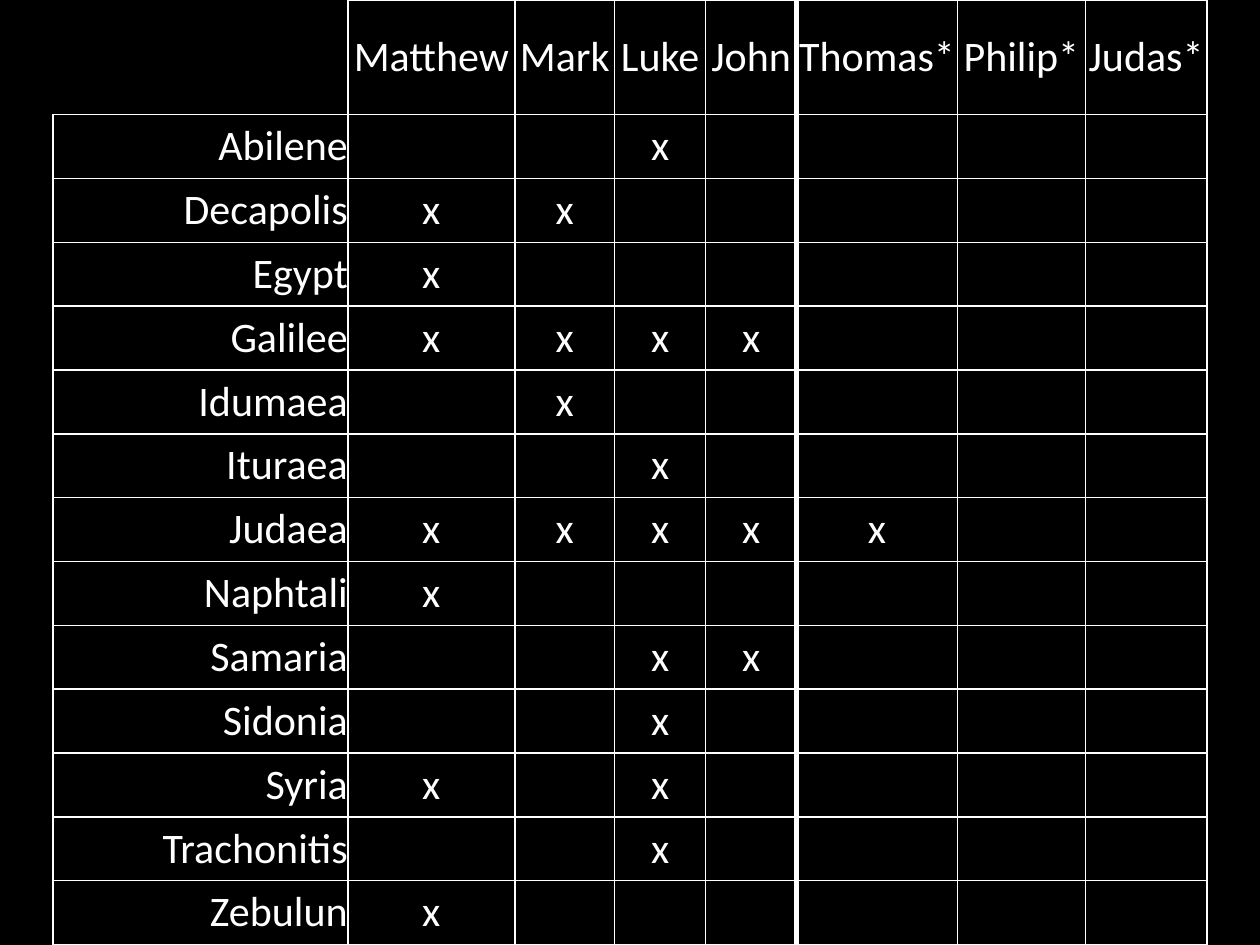
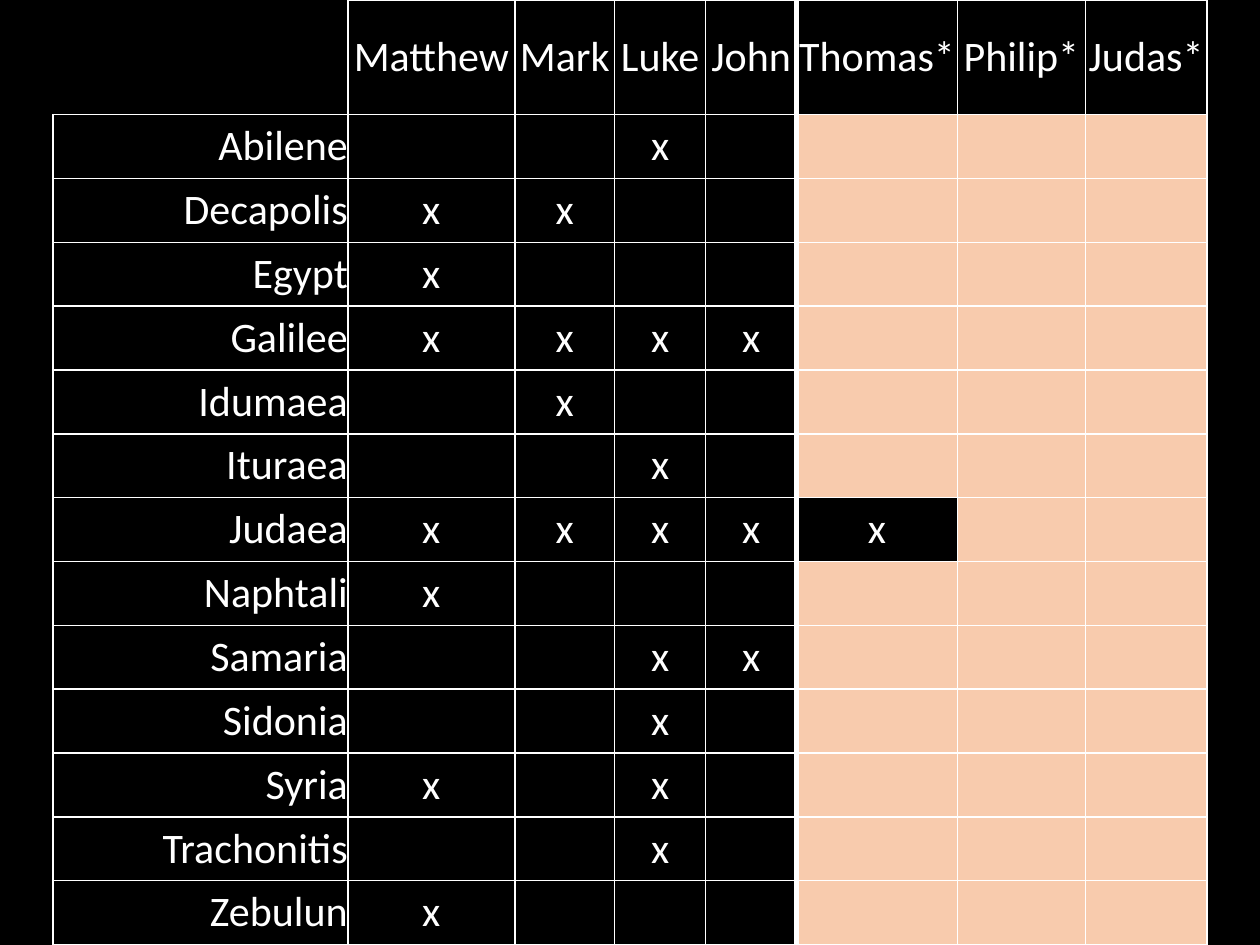
from lxml import etree
from pptx import Presentation
from pptx.dml.color import RGBColor
from pptx.enum.text import MSO_ANCHOR, PP_ALIGN
from pptx.oxml.ns import qn
from pptx.util import Pt

CENTER, RIGHT = PP_ALIGN.CENTER, PP_ALIGN.RIGHT
MIDDLE = MSO_ANCHOR.MIDDLE
BLACK = RGBColor(0x00, 0x00, 0x00)
WHITE = RGBColor(0xFF, 0xFF, 0xFF)
PEACH = RGBColor(0xF8, 0xCB, 0xAD)

GOSPELS = ["Matthew", "Mark", "Luke", "John", "Thomas*", "Philip*", "Judas*"]
CANONICAL_COUNT = 4
MENTIONS = {
    "Abilene": ["Luke"],
    "Decapolis": ["Matthew", "Mark"],
    "Egypt": ["Matthew"],
    "Galilee": ["Matthew", "Mark", "Luke", "John"],
    "Idumaea": ["Mark"],
    "Ituraea": ["Luke"],
    "Judaea": ["Matthew", "Mark", "Luke", "John", "Thomas*"],
    "Naphtali": ["Matthew"],
    "Samaria": ["Luke", "John"],
    "Sidonia": ["Luke"],
    "Syria": ["Matthew", "Luke"],
    "Trachonitis": ["Luke"],
    "Zebulun": ["Matthew"],
}

PAGE_WIDTH, PAGE_HEIGHT = 720, 540
COLUMN_WIDTHS = [168.5, 95.5, 57, 52, 52, 92, 73, 69.5]
HEADER_HEIGHT = 65.5
ROW_HEIGHT = (PAGE_HEIGHT - HEADER_HEIGHT) / len(MENTIONS)
THIN, THICK = 1, 3


class GospelDeck:
    font_name = "Calibri"
    font_size = Pt(24)

    def __init__(self):
        self.deck = Presentation()
        self.deck.slide_width = Pt(PAGE_WIDTH)
        self.deck.slide_height = Pt(PAGE_HEIGHT)
        self.page = None

    def add_page(self):
        self.page = self.deck.slides.add_slide(self.deck.slide_layouts[6])
        background = self.page.background.fill
        background.solid()
        background.fore_color.rgb = BLACK

    def set_borders(self, cell, widths):
        """Draw the left, right, top and bottom borders; a width of 0 hides one."""
        properties = cell._tc.get_or_add_tcPr()
        for side, width in zip("LRTB", widths):
            line = etree.SubElement(properties, qn(f"a:ln{side}"), w=str(Pt(width)))
            if width:
                fill = etree.SubElement(line, qn("a:solidFill"))
                etree.SubElement(fill, qn("a:srgbClr"), val=str(WHITE))
            else:
                etree.SubElement(line, qn("a:noFill"))

    def write_cell(self, cell, text, alignment):
        cell.margin_left = cell.margin_right = 0
        cell.margin_top = cell.margin_bottom = 0
        cell.vertical_anchor = MIDDLE
        para = cell.text_frame.paragraphs[0]
        para.text = text
        para.alignment = alignment
        para.font.name = self.font_name
        para.font.size = self.font_size
        para.font.color.rgb = WHITE

    def add_mentions_table(self, absence_color=None):
        """Add the region table, tinting unmarked non-canonical cells if asked."""
        rows = [["", *GOSPELS]]
        for region, mentioned in MENTIONS.items():
            rows.append([region, *("x" if name in mentioned else "" for name in GOSPELS)])

        table_width = sum(COLUMN_WIDTHS)
        table = self.page.shapes.add_table(
            len(rows), len(COLUMN_WIDTHS), Pt((PAGE_WIDTH - table_width) / 2), 0,
            Pt(table_width), Pt(PAGE_HEIGHT)).table
        table.first_row = table.horz_banding = False
        for column, width in zip(table.columns, COLUMN_WIDTHS):
            column.width = Pt(width)
        for index, row in enumerate(table.rows):
            row.height = Pt(ROW_HEIGHT if index else HEADER_HEIGHT)

        for row_index, texts in enumerate(rows):
            for column_index, text in enumerate(texts):
                cell = table.cell(row_index, column_index)
                is_corner = row_index == column_index == 0
                outer = 0 if is_corner else THIN
                left = THICK if column_index == CANONICAL_COUNT + 1 else outer
                right = THICK if column_index == CANONICAL_COUNT else THIN
                self.set_borders(cell, (left, right, outer, THIN))
                if absence_color and not text and column_index > CANONICAL_COUNT:
                    cell.fill.solid()
                    cell.fill.fore_color.rgb = absence_color
                else:
                    cell.fill.background()
                self.write_cell(cell, text, CENTER if column_index else RIGHT)


def main():
    gospels = GospelDeck()
    for absence_color in (None, PEACH):
        gospels.add_page()
        gospels.add_mentions_table(absence_color)
    gospels.deck.save("out.pptx")


if __name__ == "__main__":
    main()
